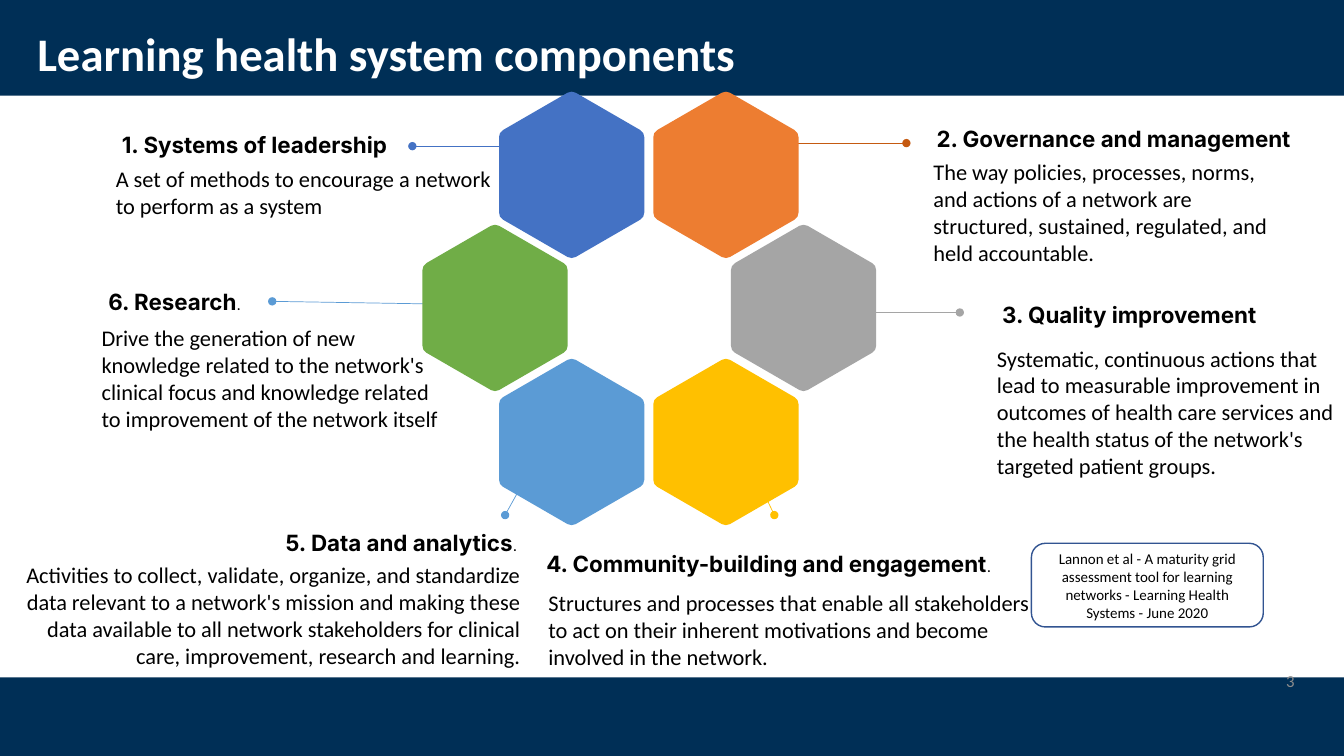
from dataclasses import dataclass
from typing import NamedTuple

from lxml.etree import SubElement
from pptx import Presentation
from pptx.dml.color import RGBColor
from pptx.enum.shapes import MSO_CONNECTOR, MSO_SHAPE
from pptx.enum.text import MSO_ANCHOR, PP_ALIGN
from pptx.oxml.ns import qn
from pptx.util import Pt

PX = 9144  # EMU in one px, 100 px to the inch
LEFT, MID, RIGHT = PP_ALIGN.LEFT, PP_ALIGN.CENTER, PP_ALIGN.RIGHT


@dataclass(frozen=True)
class Theme:
    navy: str = "002F56"
    white: str = "FFFFFF"
    black: str = "000000"
    gray: str = "8C8C8C"
    edge: str = "325491"
    blue: str = "4472C4"
    orange: str = "ED7D31"
    rust: str = "C55A11"
    silver: str = "A5A5A5"
    gold: str = "FFC000"
    sky: str = "5B9BD5"
    green: str = "70AD47"
    body: str = "Calibri"
    head: str = "Inter"
    title: float = 33.3
    text: float = 16
    page: float = 12
    small: float = 10.7


class Box(NamedTuple):
    x: int
    y: int
    w: int
    h: int


class Lead(NamedTuple):
    x1: int
    y1: int
    x2: int
    y2: int
    color: str
    width: float


class Hex(NamedTuple):
    col: int
    row: int
    color: str


@dataclass(frozen=True)
class Part:
    name: str
    head: Box
    side: PP_ALIGN
    lead: Lead
    text: str
    body: Box
    flow: PP_ALIGN = LEFT
    dot: str = ""


T = Theme()

PARTS = [
    Part("1. Systems of leadership", Box(87, 49, 310, 188), RIGHT,
         Lead(501, 145, 409, 145, T.blue, 0.75),
         "A set of methods to encourage a network to perform as a system",
         Box(105, 159, 407, 64)),
    Part("2. Governance and management", Box(916, 43, 387, 188), LEFT,
         Lead(744, 142, 899, 142, T.rust, 0.75),
         "The way policies, processes, norms, and actions of a network are "
         "structured, sustained, regulated, and held accountable.",
         Box(916, 152, 357, 118)),
    Part("3. Quality improvement", Box(981, 218, 310, 188), LEFT,
         Lead(764, 310, 952, 310, T.silver, 0.75),
         "Systematic, continuous actions that lead to measurable improvement "
         "in outcomes of health care services and the health status of the "
         "network's targeted patient groups.",
         Box(979, 337, 357, 145)),
    Part("4. Community-building and engagement", Box(483, 465, 513, 188), RIGHT,
         Lead(740, 452, 768, 511, T.gold, 0.5),
         "Structures and processes that enable all stakeholders to act on "
         "their inherent motivations and become involved in the network.",
         Box(534, 580, 511, 91), dot="."),
    Part("5. Data and analytics", Box(13, 444, 513, 188), RIGHT,
         Lead(531, 457, 501, 511, T.sky, 0.5),
         "Activities to collect, validate, organize, and standardize data "
         "relevant to a network's mission and making these data available to "
         "all network stakeholders for clinical care, improvement, research "
         "and learning.",
         Box(2, 552, 524, 118), RIGHT, "."),
    Part("6. Research", Box(-58, 205, 310, 188), RIGHT,
         Lead(454, 302, 270, 299, T.sky, 0.5),
         "Drive the generation of new knowledge related to the network's "
         "clinical focus and knowledge related to improvement of the network "
         "itself",
         Box(91, 317, 357, 118), dot="."),
]

# Columns and rows count half steps of the ring
RING = [Hex(3, 0, T.orange), Hex(1, 0, T.blue), Hex(0, 1, T.green),
        Hex(4, 1, T.silver), Hex(3, 2, T.gold), Hex(1, 2, T.sky)]
HEX_W, HEX_H = 144, 165
CORNER = [(72, 0), (76, 1), (140, 38), (143, 41), (144, 45)]


def paint(shape, fill: str = "", line: str = "", width: float = 1) -> None:
    shape.shadow.inherit = False
    if fill:
        shape.fill.solid()
        shape.fill.fore_color.rgb = RGBColor.from_string(fill)
    else:
        shape.fill.background()
    if line:
        shape.line.color.rgb = RGBColor.from_string(line)
        shape.line.width = Pt(width)
    else:
        shape.line.fill.background()


def write(shape, text: str, *, font: str = T.body, size: float = T.text,
          color: str = T.black, bold: bool = False, align: PP_ALIGN = LEFT,
          anchor: MSO_ANCHOR = MSO_ANCHOR.TOP, inset: tuple = (10, 5),
          dot: str = "", space: float = 1.0) -> None:
    frame = shape.text_frame
    frame.word_wrap = True
    frame.vertical_anchor = anchor
    frame.margin_left = frame.margin_right = inset[0] * PX
    frame.margin_top = frame.margin_bottom = inset[1] * PX
    para = frame.paragraphs[0]
    para.alignment = align
    para.line_spacing = space
    runs = [(text, size, bold)]
    if dot:
        runs.append((dot, T.small, False))
    for words, points, heavy in runs:
        run = para.add_run()
        run.text = words
        run.font.name = font
        run.font.size = Pt(points)
        run.font.bold = heavy
        run.font.color.rgb = RGBColor.from_string(color)


def label(slide, box: Box, text: str, **look) -> None:
    write(slide.shapes.add_textbox(*(n * PX for n in box)), text, **look)


def block(slide, kind: MSO_SHAPE, box: Box, **look):
    shape = slide.shapes.add_shape(kind, *(n * PX for n in box))
    paint(shape, **look)
    return shape


def link(slide, lead: Lead) -> None:
    line = slide.shapes.add_connector(
        MSO_CONNECTOR.STRAIGHT, *(n * PX for n in lead[:4]))
    line.line.color.rgb = RGBColor.from_string(lead.color)
    line.line.width = Pt(lead.width)
    props = line._element.spPr
    SubElement(props.find(qn("a:ln")), qn("a:tailEnd"), type="oval")
    SubElement(props, qn("a:effectLst"))


def tile(slide, cell: Hex) -> None:
    x, y = 419 + cell.col * 153 // 2, 91 + cell.row * 265 // 2
    half = CORNER + [(a, HEX_H - b) for a, b in reversed(CORNER)]
    ring = half + [(HEX_W - a, b) for a, b in reversed(half)]
    points = [(x + a, y + b) for a, b in ring]
    path = slide.shapes.build_freeform(*points[0], scale=PX)
    path.add_line_segments(points[1:], close=True)
    paint(path.convert_to_shape(), fill=cell.color)


def main() -> None:
    deck = Presentation()
    deck.slide_width, deck.slide_height = 1333 * PX, 750 * PX
    slide = deck.slides.add_slide(deck.slide_layouts[6])

    # Bands and title
    for box in (Box(0, 0, 1333, 95), Box(0, 672, 1333, 78)):
        block(slide, MSO_SHAPE.RECTANGLE, box, fill=T.navy)
    label(slide, Box(37, 23, 1031, 58), "Learning health system components",
          size=T.title, color=T.white, bold=True, anchor=MSO_ANCHOR.BOTTOM,
          inset=(0, 0), space=0.9)

    # Six components with their leader lines
    for part in PARTS:
        label(slide, part.head, part.name, font=T.head, bold=True,
              align=part.side, anchor=MSO_ANCHOR.MIDDLE, inset=(13, 13),
              dot=part.dot)
        link(slide, part.lead)
        label(slide, part.body, part.text, align=part.flow)

    # Source note and page number
    note = block(slide, MSO_SHAPE.ROUNDED_RECTANGLE, Box(1023, 539, 230, 83),
                 line=T.edge)
    write(note, "Lannon et al - A maturity grid assessment tool for learning "
          "networks - Learning Health Systems - June 2020", size=T.small,
          align=MID, anchor=MSO_ANCHOR.MIDDLE)
    label(slide, Box(1214, 647, 80, 57), "3", size=T.page, color=T.gray,
          align=RIGHT, anchor=MSO_ANCHOR.MIDDLE)

    # Hexagon ring
    for cell in RING:
        tile(slide, cell)

    deck.save("out.pptx")


if __name__ == "__main__":
    main()
